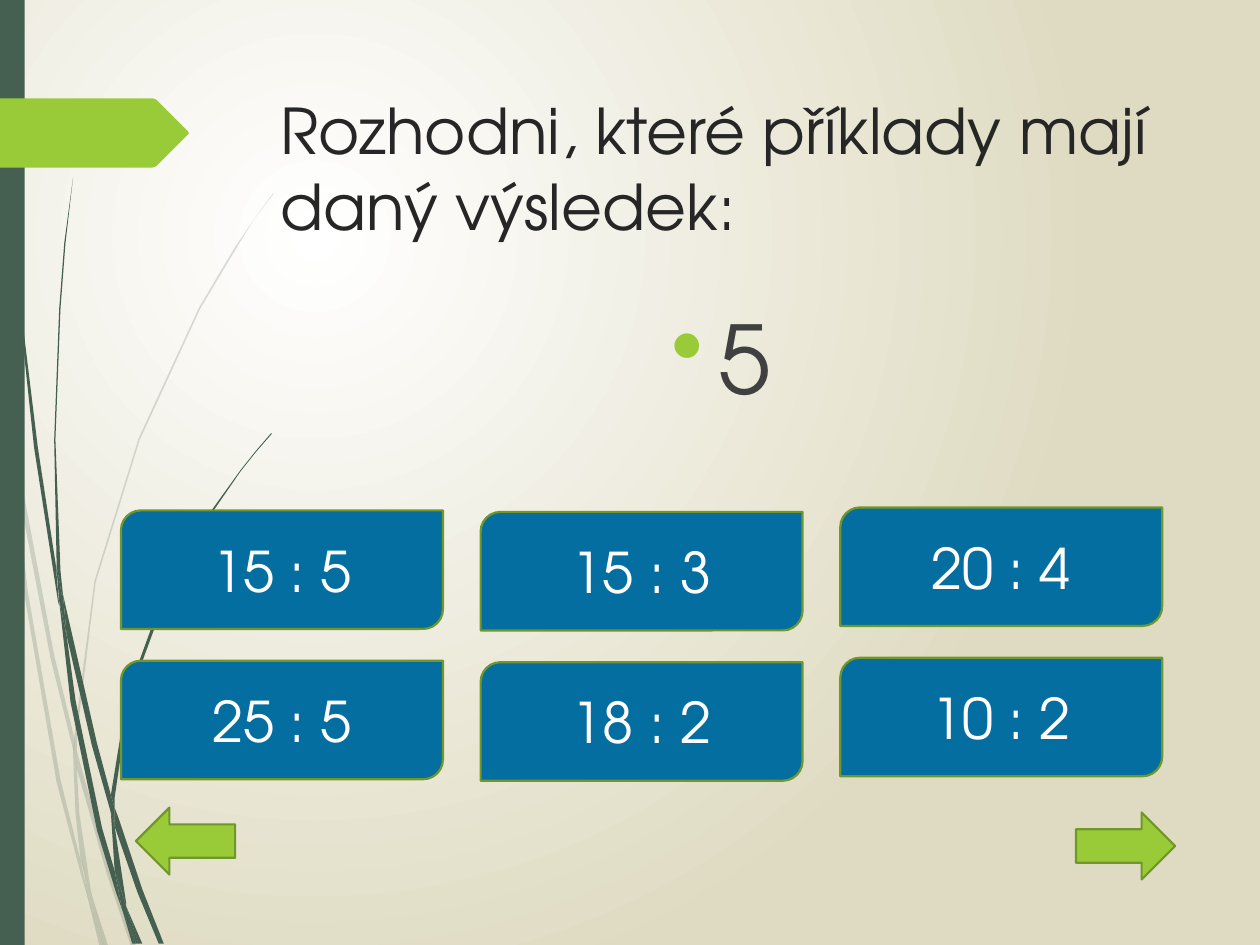
from lxml.etree import SubElement
from pptx import Presentation
from pptx.dml.color import RGBColor as RGB
from pptx.enum.shapes import MSO_SHAPE as SHAPE
from pptx.enum.text import MSO_ANCHOR as ANCHOR, PP_ALIGN as ALIGN
from pptx.oxml.ns import qn
from pptx.util import Cm, Pt

COLORS = {
    "white": "FFFFFF", "sand": "DFDBC2", "pine": "455F51", "lime": "99CB38",
    "olive": "719629", "blue": "056EA0", "title": "262626", "body": "404040",
}
FONT = "TeX Gyre Adventor"
UNIT = Cm(0.0254)

PALE_BLADES = [
    [(8, 350), (6, 322), (0, 282), (0, 299), (7, 344)],
    [(40, 522), (59, 599), (59, 586), (43, 520), (10, 345), (12, 376)],
    [(64, 607), (61, 596), (61, 610), (85, 694), (104, 751), (108, 751), (88, 692)],
    [(83, 751), (86, 751), (73, 711)],
    [(64, 683), (48, 619), (22, 469), (12, 376), (8, 350), (19, 470), (45, 621),
     (64, 693), (70, 714), (69, 707)],
    [(58, 599), (60, 646), (64, 683), (67, 692), (73, 711), (72, 706), (63, 646),
     (61, 610), (61, 608)],
    [(61, 584), (76, 462), (111, 349), (159, 245), (187, 198), (201, 175), (217, 154),
     (217, 153), (201, 175), (186, 197), (158, 244), (110, 348), (75, 461), (59, 584),
     (59, 586), (61, 596)],
    [(70, 714), (79, 751), (82, 751)],
    [(61, 608), (61, 610), (61, 596), (59, 586), (58, 599)],
    [(67, 692), (65, 683), (69, 707), (70, 714), (82, 751), (83, 751), (73, 711)],
]
DARK_BLADES = [
    [(5, 110), (14, 233), (27, 355), (46, 477), (47, 481), (45, 457), (45, 453),
     (30, 355), (15, 232), (6, 109), (4, 48), (3, 0), (2, 0), (3, 48)],
    [(73, 592), (88, 645), (88, 633), (88, 631), (77, 590), (50, 472), (53, 505)],
    [(94, 649), (91, 641), (91, 656), (109, 708), (126, 749), (130, 749), (113, 706)],
    [(91, 691), (81, 657), (60, 556), (53, 505), (47, 477), (56, 557), (77, 659),
     (92, 708), (97, 722), (96, 717)],
    [(50, 472), (48, 453), (44, 349), (48, 245), (52, 193), (58, 141), (51, 193),
     (47, 245), (43, 349), (45, 449), (49, 472)],
    [(110, 749), (113, 749), (100, 719)],
    [(47, 477), (53, 505), (50, 472), (49, 472), (45, 449), (45, 453)],
    [(91, 633), (103, 552), (131, 476), (169, 406), (191, 374), (203, 359), (216, 344),
     (215, 344), (203, 358), (191, 373), (168, 405), (129, 474), (101, 551), (88, 631),
     (91, 641)],
    [(97, 722), (105, 749), (108, 749)],
    [(88, 645), (91, 691), (96, 706), (100, 719), (100, 716), (91, 656), (90, 651)],
    [(88, 645), (90, 651), (91, 656), (91, 641), (88, 631), (88, 633)],
    [(96, 706), (91, 691), (96, 717), (97, 722), (108, 749), (110, 749), (100, 719)],
]
TAG = [(0, 78), (121, 78), (124, 79), (149, 104), (150, 105.5), (149, 107),
       (124, 132), (121, 133), (0, 133)]


def rgb(name):
    return RGB.from_string(COLORS[name])


def apply(obj, values):
    for key, value in values.items():
        setattr(obj, key, value)


class Deck:
    def __init__(self, prs):
        self.s = prs.slides.add_slide(prs.slide_layouts[6])
        self.shapes = self.s.shapes

    def background(self, inner, outer):
        fill = self.s.background.fill
        fill.gradient()
        for stop, name in zip(fill.gradient_stops, (inner, outer)):
            stop.color.rgb = rgb(name)
        grad = next(self.s.element.iter(qn("a:gradFill")))
        grad.remove(grad.find(qn("a:lin")))
        circle = SubElement(grad, qn("a:path"), {"path": "circle"})
        SubElement(circle, qn("a:fillToRect"),
                   {"l": "50000", "t": "50000", "r": "100000", "b": "100000"})

    def paint(self, sp, fill, line=None):
        sp.shadow.inherit = False
        sp.fill.solid()
        sp.fill.fore_color.rgb = rgb(fill)
        if line:
            sp.line.color.rgb = rgb(line)
            sp.line.width = Pt(1.25)
        else:
            sp.line.fill.background()
        return sp

    def outline(self, shapes, points, fill, alpha=None):
        fb = shapes.build_freeform(*points[0], scale=UNIT)
        fb.add_line_segments(points[1:], close=True)
        sp = self.paint(fb.convert_to_shape(), fill)
        if alpha:
            clr = next(sp.element.spPr.iter(qn("a:srgbClr")))
            SubElement(clr, qn("a:alpha"), {"val": str(alpha * 1000)})

    def blades(self, outlines, fill, alpha=None):
        grp = self.shapes.add_group_shape()
        for points in outlines:
            self.outline(grp.shapes, points, fill, alpha)

    def shape(self, kind, box, fill, line=None):
        sp = self.shapes.add_shape(kind, *map(Cm, box))
        return self.paint(sp, fill, line)

    def label(self, sp, text, size, color, **para):
        sp.text_frame.word_wrap = True
        p = sp.text_frame.paragraphs[0]
        apply(p, para)
        r = p.add_run()
        r.text = text
        apply(r.font, {"name": FONT, "size": Pt(size)})
        r.font.color.rgb = rgb(color)
        return p

    def text(self, box, text, size, color, **para):
        sp = self.shapes.add_textbox(*map(Cm, box))
        return self.label(sp, text, size, color, **para)

    def bullet(self, p, color):
        pPr = p._p.get_or_add_pPr()
        for key, value in {"marL": Cm(0.95), "indent": Cm(-0.95)}.items():
            pPr.set(key, str(int(value)))
        clr = SubElement(pPr, qn("a:buClr"))
        SubElement(clr, qn("a:srgbClr"), {"val": COLORS[color]})
        SubElement(pPr, qn("a:buChar"), {"char": "•"})

    def button(self, box, text):
        sp = self.shape(SHAPE.ROUND_2_DIAG_RECTANGLE, box, "blue", "olive")
        sp.text_frame.vertical_anchor = ANCHOR.MIDDLE
        self.label(sp, text, 32, "white", alignment=ALIGN.CENTER)

    def arrow(self, left, top, rotation=0):
        sp = self.shape(SHAPE.RIGHT_ARROW, (left, top, 2, 1.35), "lime", "olive")
        sp.rotation = rotation


def main():
    prs = Presentation()
    apply(prs, {"slide_width": Cm(25.4), "slide_height": Cm(19.05)})
    deck = Deck(prs)
    deck.background("white", "sand")
    deck.blades(PALE_BLADES, "pine", 20)
    deck.blades(DARK_BLADES, "pine")
    deck.shape(SHAPE.RECTANGLE, (0, 0, 0.5, 19.05), "pine")
    deck.outline(deck.shapes, TAG, "lime")
    deck.text((5.4, 1.73, 18.31, 3.56),
              "Rozhodni, které příklady mají daný výsledek:", 36, "title")
    p = deck.text((5.38, 5.92, 18.31, 10.49), "5", 54, "body",
                  alignment=ALIGN.CENTER, space_before=Pt(10))
    deck.bullet(p, "lime")

    columns = [(10.29, "15 : 5", "25 : 5"), (10.32, "15 : 3", "18 : 2"),
               (10.23, "20 : 4", "10 : 2")]
    for col, (top, *tasks) in enumerate(columns):
        for row, task in enumerate(tasks):
            deck.button((2.44 + 7.25 * col, top + 3.03 * row, 6.49, 2.39), task)

    deck.arrow(21.69, 16.38)
    deck.arrow(2.74, 16.28, 180)
    prs.save("out.pptx")


if __name__ == "__main__":
    main()
